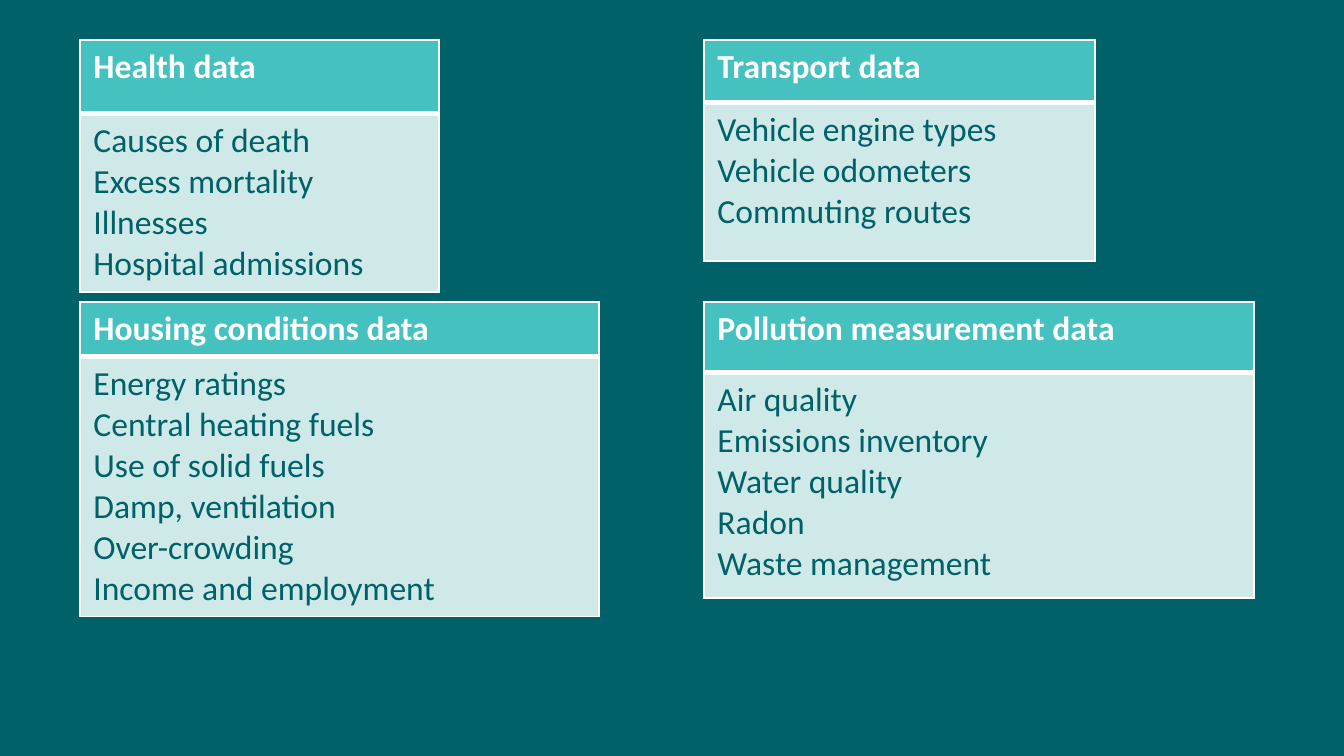
from lxml import etree
from pptx import Presentation
from pptx.dml.color import RGBColor
from pptx.oxml.ns import qn
from pptx.util import Emu, Pt

PX = 914400 / 134.4
DARK = RGBColor(0x00, 0x61, 0x68)
TEAL = RGBColor(0x45, 0xC1, 0xC0)
PALE = RGBColor(0xCF, 0xE9, 0xE8)
WHITE = RGBColor(0xFF, 0xFF, 0xFF)

LEFT, RIGHT = 80, 704
TOP, LOW = 40, 302

TABLES = [
    (LEFT, TOP, 359, 74, 178, "Health data",
     ["Causes of death", "Excess mortality", "Illnesses", "Hospital admissions"]),
    (RIGHT, TOP, 391, 63, 158, "Transport data",
     ["Vehicle engine types", "Vehicle odometers", "Commuting routes"]),
    (RIGHT, LOW, 550, 71, 225, "Pollution measurement data",
     ["Air quality", "Emissions inventory", "Water quality", "Radon",
      "Waste management"]),
    (LEFT, LOW, 519, 54, 260, "Housing conditions data",
     ["Energy ratings", "Central heating fuels", "Use of solid fuels",
      "Damp, ventilation", "Over-crowding", "Income and employment"]),
]


def px(n):
    return Emu(round(n * PX))


def style(cell, lines, fill, color, bold, thick):
    cell.fill.solid()
    cell.fill.fore_color.rgb = fill
    cell.text = "\n".join(lines)
    for para in cell.text_frame.paragraphs:
        font = para.font
        font.name = "Calibri"
        font.size = Pt(18)
        font.bold = bold
        font.color.rgb = color
    props = cell._tc.get_or_add_tcPr()
    for i, side in enumerate(["lnL", "lnR", "lnT", "lnB"]):
        width = Pt(3 if side == thick else 1)
        line = etree.Element(qn("a:" + side), w=str(width))
        paint = etree.SubElement(line, qn("a:solidFill"))
        etree.SubElement(paint, qn("a:srgbClr"), val=str(WHITE))
        props.insert(i, line)


prs = Presentation()
prs.slide_width = px(1344)
prs.slide_height = px(756)
slide = prs.slides.add_slide(prs.slide_layouts[6])
back = slide.background.fill
back.solid()
back.fore_color.rgb = DARK

for x, y, width, head, body, title, items in TABLES:
    frame = slide.shapes.add_table(2, 1, px(x), px(y), px(width), px(head + body))
    table = frame.table
    table.horz_banding = False
    table.rows[0].height = px(head)
    table.rows[1].height = px(body)
    style(table.cell(0, 0), [title], TEAL, WHITE, True, "lnB")
    style(table.cell(1, 0), items, PALE, DARK, False, "lnT")

prs.save("out.pptx")
